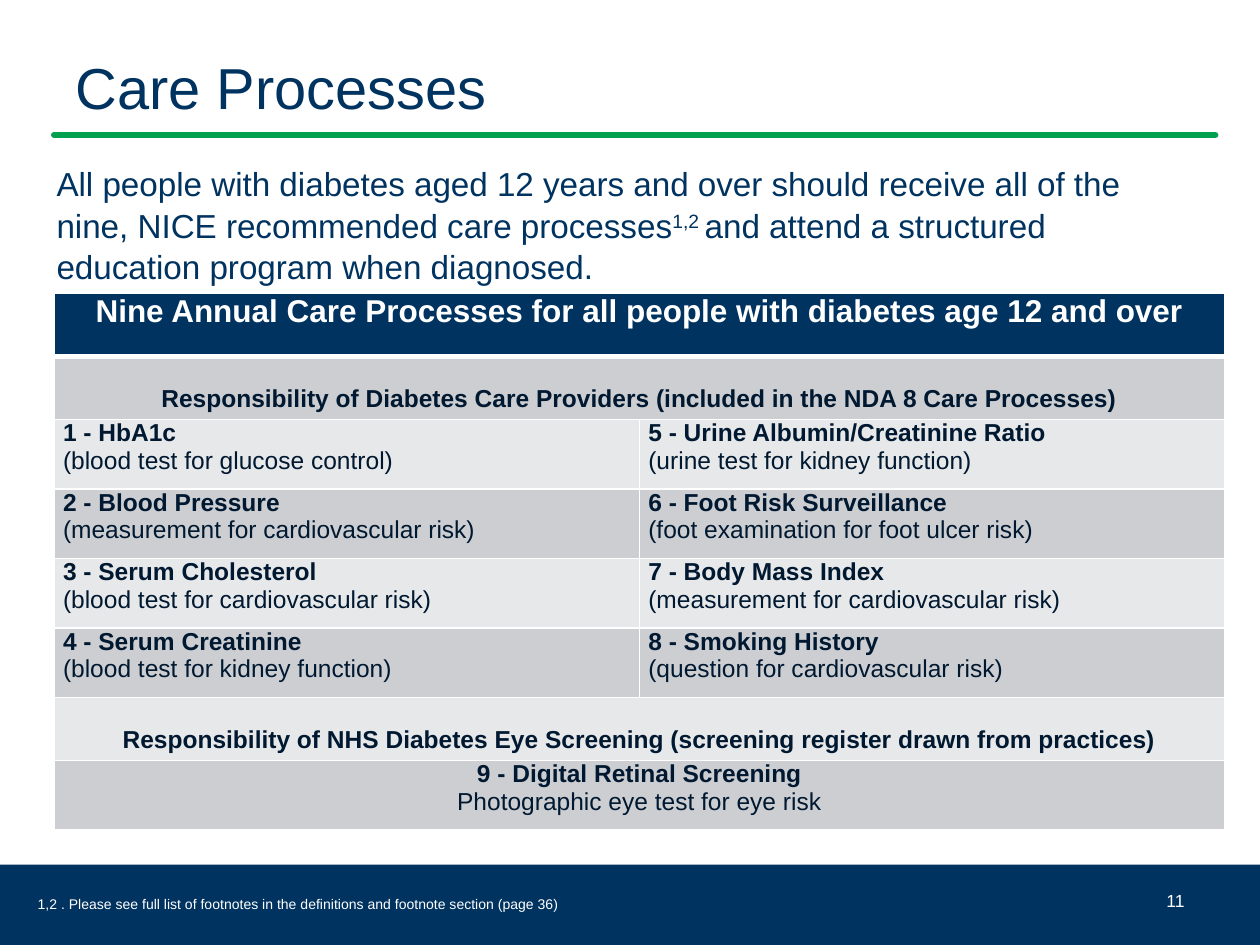
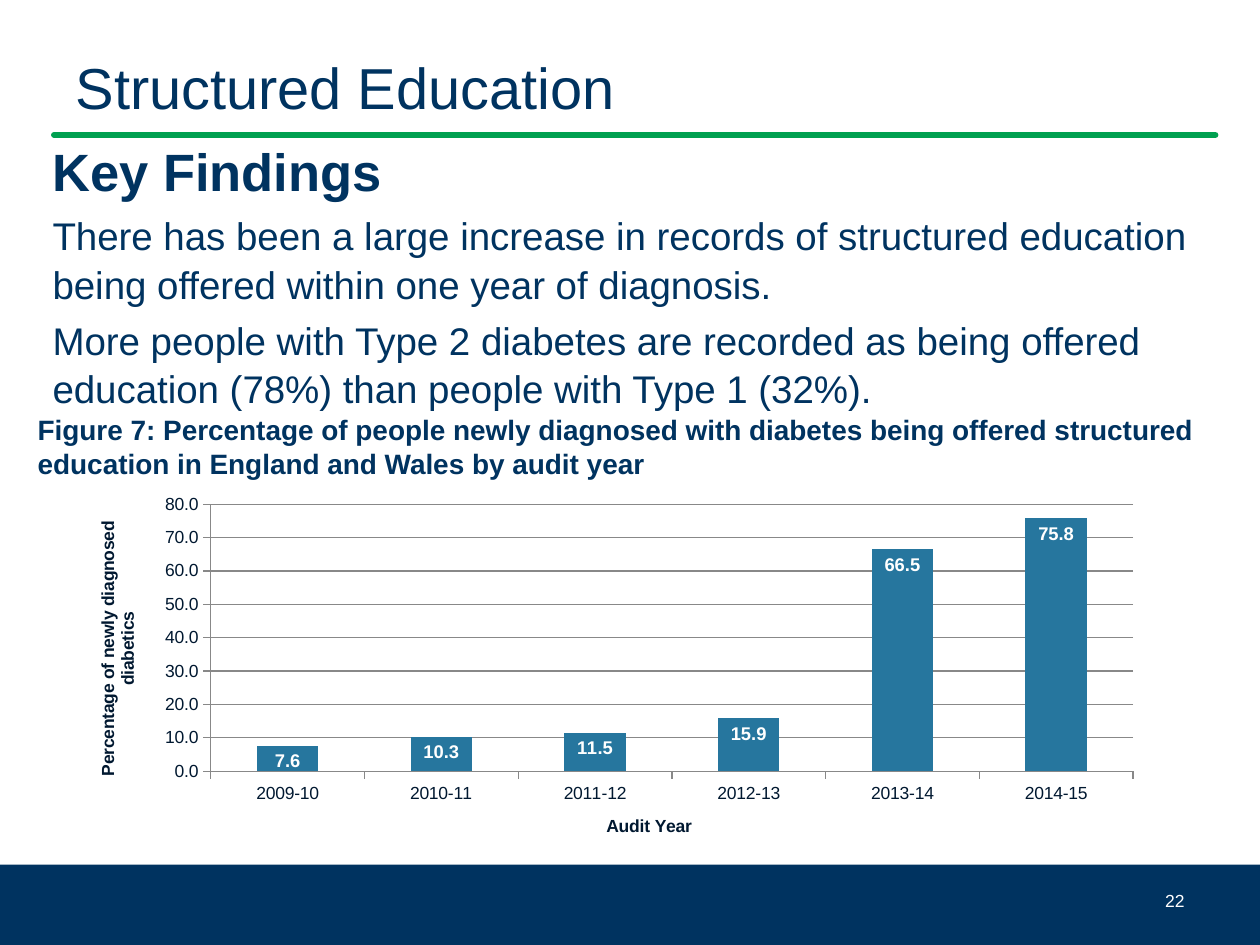
"""Build two diabetes audit slides: a care process table and an education chart."""
from lxml.etree import SubElement
from pptx import Presentation
from pptx.chart.data import CategoryChartData
from pptx.dml.color import RGBColor
from pptx.enum.chart import XL_CHART_TYPE, XL_LABEL_POSITION, XL_TICK_MARK
from pptx.enum.shapes import MSO_CONNECTOR, MSO_SHAPE
from pptx.enum.text import MSO_ANCHOR, PP_ALIGN
from pptx.oxml import parse_xml
from pptx.oxml.ns import nsdecls, qn
from pptx.util import Cm, Pt

NAVY = RGBColor(0x00, 0x33, 0x60)
GREEN = RGBColor(0x00, 0xA0, 0x50)
WHITE = RGBColor(0xFF, 0xFF, 0xFF)
INK = RGBColor(0x00, 0x18, 0x30)
DARK = RGBColor(0xCC, 0xCE, 0xD2)
PALE = RGBColor(0xE7, 0xE8, 0xEA)
TEAL = RGBColor(0x26, 0x76, 0x9E)
GREY = RGBColor(0x88, 0x88, 0x88)

TITLE = {"size": Pt(33), "rgb": NAVY}
LEAD = {"size": Pt(19), "rgb": NAVY}
HEAD = {"size": Pt(30), "rgb": NAVY, "bold": True}
BODY = {"size": Pt(22), "rgb": NAVY}
LABEL = {"size": Pt(16), "rgb": NAVY, "bold": True}
PAGE = {"size": Pt(10), "rgb": WHITE}
NOTE = {"size": Pt(8), "rgb": WHITE}
BANNER = {"size": Pt(18), "rgb": WHITE, "bold": True}
STRONG = {"size": Pt(14), "rgb": INK, "bold": True}
PLAIN = {"size": Pt(14), "rgb": INK, "bold": False}
AXIS = {"size": Pt(10), "rgb": INK, "bold": False}
NAMED = {"size": Pt(10), "rgb": INK, "bold": True}
VALUE = {"size": Pt(10.5), "rgb": WHITE, "bold": True}

TESTS = [
    ("1 - HbA1c", "(blood test for glucose control)"),
    ("2 - Blood Pressure", "(measurement for cardiovascular risk)"),
    ("3 - Serum Cholesterol", "(blood test for cardiovascular risk)"),
    ("4 - Serum Creatinine", "(blood test for kidney function)"),
    ("5 - Urine Albumin/Creatinine Ratio", "(urine test for kidney function)"),
    ("6 - Foot Risk Surveillance", "(foot examination for foot ulcer risk)"),
    ("7 - Body Mass Index", "(measurement for cardiovascular risk)"),
    ("8 - Smoking History", "(question for cardiovascular risk)"),
]
YEARS = ["2009-10", "2010-11", "2011-12", "2012-13", "2013-14", "2014-15"]
RATES = [7.6, 10.3, 11.5, 15.9, 66.5, 75.8]


def put(item, form):
    """Set each format value on the item."""
    for key, val in form.items():
        if key == "rgb":
            item.color.rgb = val
        else:
            setattr(item, key, val)


def style(font, form):
    """Set the shared typeface and the given font values."""
    put(font, {"name": "Arial", **form})


def write(para, text, font, **form):
    """Add a run to a paragraph, format both and return the run."""
    run = para.add_run()
    run.text = text
    style(run.font, font)
    put(para, form)
    return run


def add_box(slide, left, top, width, height, **form):
    """Add a wrapping text box and return its text frame."""
    frame = slide.shapes.add_textbox(Cm(left), Cm(top), Cm(width), Cm(height)).text_frame
    put(frame, {"word_wrap": True, **form})
    return frame


def add_page(deck, title, number):
    """Add a slide with its title, rule, footer band and page number."""
    slide = deck.slides.add_slide(deck.slide_layouts[5])
    band = slide.shapes.add_shape(
        MSO_SHAPE.RECTANGLE, 0, Cm(17.43), deck.slide_width, Cm(1.62))
    band.shadow.inherit = False
    band.fill.solid()
    band.fill.fore_color.rgb = NAVY
    band.line.fill.background()

    rule = slide.shapes.add_connector(
        MSO_CONNECTOR.STRAIGHT, Cm(1.09), Cm(2.72), Cm(24.5), Cm(2.72))
    put(rule.line, {"rgb": GREEN, "width": Pt(3.5)})
    rule.line._get_or_add_ln().set("cap", "rnd")
    SubElement(rule._element.spPr, qn("a:effectLst"))

    head = slide.shapes.title
    put(head, {"left": Cm(1.27), "top": Cm(0.76), "width": Cm(22.86), "height": Cm(1.96)})
    head.text_frame.vertical_anchor = MSO_ANCHOR.MIDDLE
    write(head.text_frame.paragraphs[0], title, TITLE, alignment=PP_ALIGN.LEFT)

    frame = add_box(slide, 18.21, 17.65, 5.92, 1.02, vertical_anchor=MSO_ANCHOR.MIDDLE)
    write(frame.paragraphs[0], number, PAGE, alignment=PP_ALIGN.RIGHT)
    return slide


def edge(cell, row):
    """Draw white borders, thick between the banner and the next row."""
    props = cell._tc.get_or_add_tcPr()
    wide = {(0, "B"), (1, "T")}
    for spot, side in enumerate("LRTB"):
        width = Pt(3 if (row, side) in wide else 1)
        props.insert(spot, parse_xml(
            f'<a:ln{side} {nsdecls("a")} w="{width}"><a:solidFill>'
            f'<a:srgbClr val="{WHITE}"/></a:solidFill></a:ln{side}>'))


def fill_cell(cell, lines, align=PP_ALIGN.LEFT, low=False):
    """Write styled lines into a cell, set low where asked."""
    if low:
        put(cell, {"vertical_anchor": MSO_ANCHOR.BOTTOM, "margin_bottom": Cm(0.13)})
    frame = cell.text_frame
    for spot, (text, font) in enumerate(lines):
        para = frame.add_paragraph() if spot else frame.paragraphs[0]
        write(para, text, font, alignment=align)


def add_tests(slide):
    """Add the table of nine care processes."""
    tall = [1.27, 1.27, 1.4, 1.4, 1.4, 1.4, 1.27, 1.4]
    table = slide.shapes.add_table(
        len(tall), 2, Cm(1.09), Cm(5.92), Cm(23.6), Cm(sum(tall))).table
    put(table, {"first_row": False, "horz_banding": False})
    for col in table.columns:
        col.width = Cm(11.8)
    for row, height in enumerate(tall):
        table.rows[row].height = Cm(height)
        for cell in table.rows[row].cells:
            put(cell, {"margin_left": Cm(0.18), "margin_right": Cm(0.18),
                       "margin_top": 0, "margin_bottom": 0})
            cell.fill.solid()
            cell.fill.fore_color.rgb = (DARK if row % 2 else PALE) if row else NAVY
            edge(cell, row)

    for spot, (name, means) in enumerate(TESTS):
        fill_cell(table.cell(2 + spot % 4, spot // 4), [(name, STRONG), (means, PLAIN)])
    wide = {
        0: [("Nine Annual Care Processes for all people with diabetes age 12 and over", BANNER)],
        1: [("Responsibility of Diabetes Care Providers "
             "(included in the NDA 8 Care Processes)", STRONG)],
        6: [("Responsibility of NHS Diabetes Eye Screening "
             "(screening register drawn from practices)", STRONG)],
        7: [("9 - Digital Retinal Screening", STRONG),
            ("Photographic eye test for eye risk", PLAIN)],
    }
    for row, lines in wide.items():
        table.cell(row, 0).merge(table.cell(row, 1))
        fill_cell(table.cell(row, 0), lines, PP_ALIGN.CENTER, row in (1, 6))


def place_plot(chart, left, top, width, height):
    """Fix the inner plot area as shares of the chart."""
    area = chart._chartSpace.chart.plotArea
    old = area.find(qn("c:layout"))
    if old is not None:
        area.remove(old)
    parts = {"layoutTarget": "inner", "xMode": "edge", "yMode": "edge",
             "x": left, "y": top, "w": width, "h": height}
    marks = "".join(f'<c:{key} val="{val}"/>' for key, val in parts.items())
    area.insert(0, parse_xml(
        f'<c:layout {nsdecls("c")}><c:manualLayout>{marks}</c:manualLayout></c:layout>'))


def set_axis(axis, title):
    """Format an axis and give it a title."""
    put(axis, {"major_tick_mark": XL_TICK_MARK.OUTSIDE,
               "minor_tick_mark": XL_TICK_MARK.NONE})
    put(axis.format.line, {"rgb": GREY, "width": Pt(0.75)})
    style(axis.tick_labels.font, AXIS)
    write(axis.axis_title.text_frame.paragraphs[0], title, NAMED)


def add_rates(slide):
    """Add the column chart of education offers by audit year."""
    data = CategoryChartData(number_format="0.0")
    data.categories = YEARS
    data.add_series("Series 1", RATES)
    chart = slide.shapes.add_chart(
        XL_CHART_TYPE.COLUMN_CLUSTERED, Cm(0.89), Cm(9.53), Cm(22.4), Cm(7.92), data).chart
    put(chart, {"has_title": False, "has_legend": False})
    style(chart.font, AXIS)
    place_plot(chart, 0.15, 0.08, 0.83, 0.68)

    set_axis(chart.category_axis, "Audit Year")
    scale = chart.value_axis
    set_axis(scale, "Percentage of newly diagnosed diabetics")
    put(scale, {"minimum_scale": 0, "maximum_scale": 80, "major_unit": 10,
                "has_major_gridlines": True})
    put(scale.major_gridlines.format.line, {"rgb": GREY, "width": Pt(0.75)})
    put(scale.tick_labels, {"number_format": "0.0", "number_format_is_linked": False})

    plot = chart.plots[0]
    put(plot, {"gap_width": 150, "vary_by_categories": False, "has_data_labels": True})
    bars = plot.series[0].format
    bars.fill.solid()
    bars.fill.fore_color.rgb = TEAL
    put(plot.data_labels, {"show_value": True, "position": XL_LABEL_POSITION.INSIDE_END,
                           "number_format": "0.0", "number_format_is_linked": False})
    style(plot.data_labels.font, VALUE)


def add_care(deck):
    """Build the care process slide."""
    slide = add_page(deck, "Care Processes", "11")
    para = add_box(slide, 0.89, 3.12, 23.24, 2.7).paragraphs[0]
    write(para, "All people with diabetes aged 12 years and over should receive all of "
          "the nine, NICE recommended care processes", LEAD,
          space_before=Pt(1), line_spacing=1.05)
    mark = write(para, "1,2 ", LEAD)
    mark._r.get_or_add_rPr().set("baseline", "30000")
    write(para, "and attend a structured education program when diagnosed.", LEAD)
    add_tests(slide)
    note = add_box(slide, 0.51, 17.93, 17.4, 0.61)
    write(note.paragraphs[0], "1,2 . Please see full list of footnotes in the "
          "definitions and footnote section (page 36)", NOTE)


def add_study(deck):
    """Build the structured education slide."""
    slide = add_page(deck, "Structured Education", "22")
    frame = add_box(slide, 0.81, 2.62, 23.8, 5.59)
    lines = [
        ("Key Findings", HEAD, 2),
        ("There has been a large increase in records of structured education "
         "being offered within one year of diagnosis.", BODY, 4.4),
        ("More people with Type 2 diabetes are recorded as being offered "
         "education (78%) than people with Type 1 (32%).", BODY, 4.4),
    ]
    for spot, (text, font, gap) in enumerate(lines):
        para = frame.add_paragraph() if spot else frame.paragraphs[0]
        write(para, text, font, space_before=Pt(gap), line_spacing=1.05)
    label = add_box(slide, 0.51, 8.2, 24.41, 1.63)
    write(label.paragraphs[0], "Figure 7: Percentage of people newly diagnosed with diabetes "
          "being offered structured education in England and Wales by audit year", LABEL)
    add_rates(slide)


def main():
    """Build and save the deck."""
    deck = Presentation()
    put(deck, {"slide_width": Cm(25.4), "slide_height": Cm(19.05)})
    add_care(deck)
    add_study(deck)
    deck.save("out.pptx")


if __name__ == "__main__":
    main()
